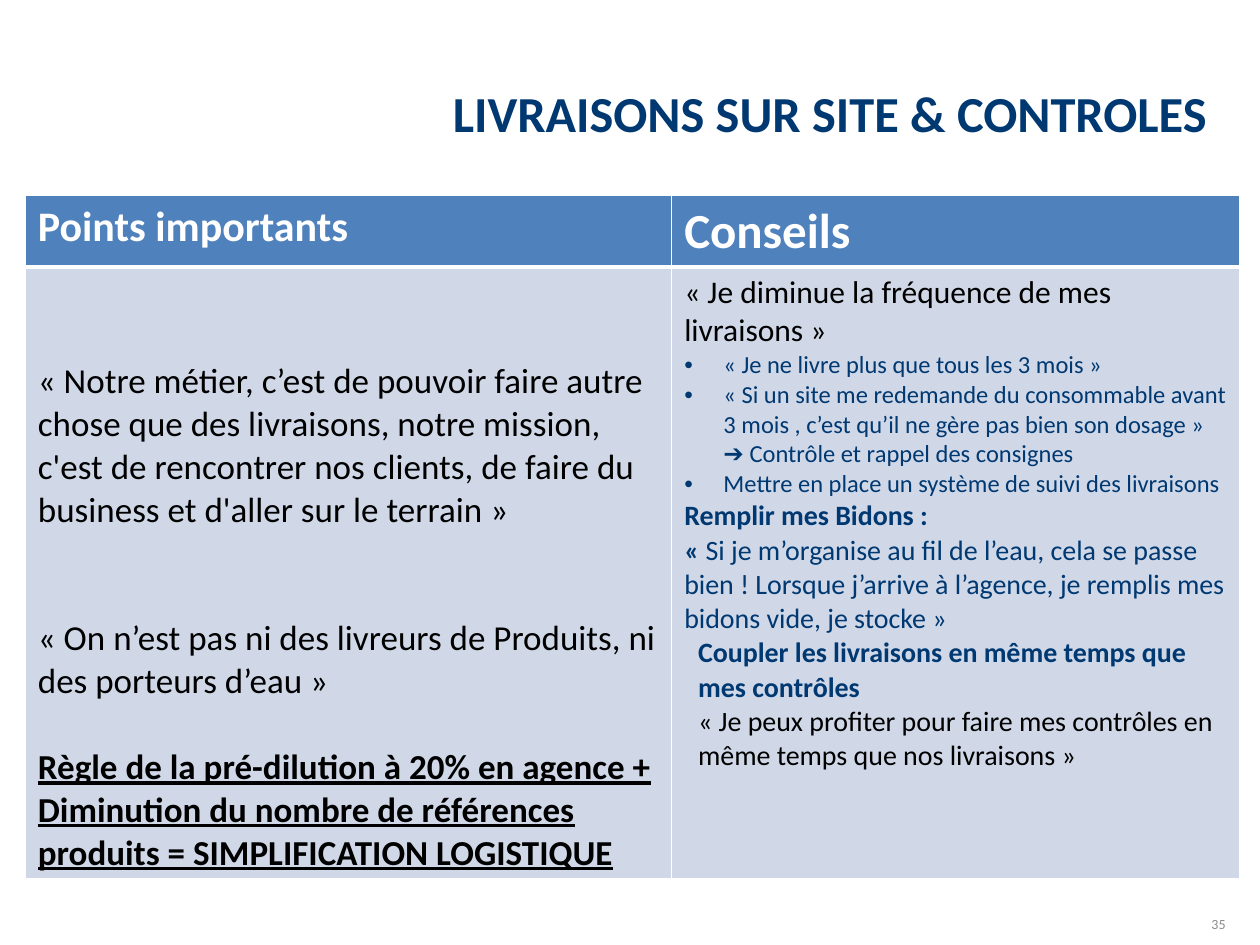
from lxml import etree
from pptx import Presentation
from pptx.dml.color import RGBColor
from pptx.enum.text import MSO_ANCHOR, PP_ALIGN
from pptx.oxml.ns import qn
from pptx.util import Cm, Pt

NAVY = RGBColor(0x00, 0x38, 0x71)
BLUE = RGBColor(0x4F, 0x81, 0xBD)
PALE = RGBColor(0xD0, 0xD8, 0xE8)
GREY = RGBColor(0x8C, 0x8C, 0x8C)
WHITE = RGBColor(0xFF, 0xFF, 0xFF)
BLACK = RGBColor(0x00, 0x00, 0x00)

QUOTE = dict(size=Pt(20), color=BLACK)
RULE = dict(QUOTE, bold=True, underline=True)
LEAD = dict(size=Pt(18), color=BLACK)
ITEM = dict(size=Pt(14), color=NAVY)
ADVICE = dict(size=Pt(16), color=NAVY)
HEADING = dict(ADVICE, bold=True)
REMARK = dict(size=Pt(16), color=BLACK)

BULLETED = dict(indent=0.79, bullet=True)
INDENTED = dict(indent=0.28)

# Each paragraph: its runs as (text, format), then its layout.
POINTS = [
    ([("« Notre métier, c’est de pouvoir faire autre chose que des livraisons, "
       "notre mission, c'est de rencontrer nos clients, de faire du business et "
       "d'aller sur le terrain »", QUOTE)], {}),
    ([("« On n’est pas ni des livreurs de Produits, ni des porteurs d’eau »",
       QUOTE)], dict(before=49)),
    ([("Règle de la pré-dilution à 20% en agence + Diminution du nombre de "
       "références produits = SIMPLIFICATION LOGISTIQUE", RULE)],
     dict(before=24.5)),
]
ADVICES = [
    ([("« Je diminue la fréquence de mes livraisons »", LEAD)], {}),
    ([("« Je ne livre plus que tous les 3 mois »", ITEM)], BULLETED),
    ([("« Si un site me redemande du consommable avant 3 mois , c’est qu’il ne "
       "gère pas bien son dosage » ➔ Contrôle et rappel des consignes", ITEM)],
     BULLETED),
    ([("Mettre en place un système de suivi des livraisons", ITEM)], BULLETED),
    ([("Remplir mes Bidons :", HEADING)], {}),
    ([("« ", HEADING),
      ("Si je m’organise au fil de l’eau, cela se passe bien ! Lorsque j’arrive "
       "à l’agence, je remplis mes bidons vide, je stocke »", ADVICE)], {}),
    ([("Coupler les livraisons en même temps que mes contrôles", HEADING)],
     INDENTED),
    ([("« Je peux profiter pour faire mes contrôles en même temps que nos "
       "livraisons »", REMARK)], INDENTED),
]


def add_run(p, text, fmt):
    r = p.add_run()
    r.text = text
    r.font.name = "Calibri"
    for name, value in dict(dict(bold=False), **fmt).items():
        if name == "color":
            r.font.color.rgb = value
        else:
            setattr(r.font, name, value)


def lay_out(p, indent=0, bullet=False, before=0):
    """Set the indent in cm, the bullet and the space before in points."""
    if before:
        p.space_before = Pt(before)
    pPr = p._p.get_or_add_pPr()
    pPr.set("marL", str(Cm(indent)))
    pPr.set("indent", str(-Cm(indent) if bullet else 0))
    if bullet:
        etree.SubElement(pPr, qn("a:buFont")).set("typeface", "Arial")
        etree.SubElement(pPr, qn("a:buChar")).set("char", "•")


def fill_text(tf, paragraphs):
    for i, (runs, layout) in enumerate(paragraphs):
        p = tf.add_paragraph() if i else tf.paragraphs[0]
        lay_out(p, **layout)
        for text, fmt in runs:
            add_run(p, text, fmt)


def add_label(s, box, text, fmt, **frame):
    """Add a right-aligned text box; frame holds text frame settings."""
    tf = s.shapes.add_textbox(*map(Cm, box)).text_frame
    for name, value in dict(dict(word_wrap=True), **frame).items():
        setattr(tf, name, value)
    p = tf.paragraphs[0]
    p.alignment = PP_ALIGN.RIGHT
    add_run(p, text, fmt)


def set_borders(cell, **widths):
    """Draw white borders, 1 pt unless another width is given for a side."""
    tcPr = cell._tc.get_or_add_tcPr()
    for i, side in enumerate("LRTB"):
        ln = etree.Element(qn(f"a:ln{side}"), w=str(Pt(widths.get(side, 1))))
        fill = etree.SubElement(ln, qn("a:solidFill"))
        etree.SubElement(fill, qn("a:srgbClr")).set("val", str(WHITE))
        tcPr.insert(i, ln)


def add_advice_table(s):
    widths, heights = (13.03, 11.46), (1.42, 12.34)
    table = s.shapes.add_table(2, 2, Cm(0.51), Cm(3.94), Cm(sum(widths)),
                               Cm(sum(heights))).table
    for column, width in zip(table.columns, widths):
        column.width = Cm(width)
    for row, height in zip(table.rows, heights):
        row.height = Cm(height)

    columns = [("Points importants", 24, POINTS), ("Conseils", 28, ADVICES)]
    for i, (title, size, paragraphs) in enumerate(columns):
        head, body = table.cell(0, i), table.cell(1, i)
        fmt = dict(size=Pt(size), color=WHITE, bold=True)
        fill_text(head.text_frame, [([(title, fmt)], {})])
        fill_text(body.text_frame, paragraphs)
        for cell, color in ((head, BLUE), (body, PALE)):
            cell.fill.solid()
            cell.fill.fore_color.rgb = color
        set_borders(head, B=3)
        set_borders(body, T=3)
    table.cell(1, 0).margin_top = Cm(1.88)


def main():
    prs = Presentation()
    prs.slide_width, prs.slide_height = Cm(25.4), Cm(19.05)
    s = prs.slides.add_slide(prs.slide_layouts[6])
    add_label(s, (1.73, 0.33, 22.86, 2.54), "LIVRAISONS SUR SITE & CONTROLES",
              dict(size=Pt(28.8), color=NAVY, bold=True),
              vertical_anchor=MSO_ANCHOR.BOTTOM, margin_bottom=0)
    add_advice_table(s)
    add_label(s, (23.06, 18.34, 1.9, 0.5), "35", dict(size=Pt(8), color=GREY))
    prs.save("out.pptx")


if __name__ == "__main__":
    main()
